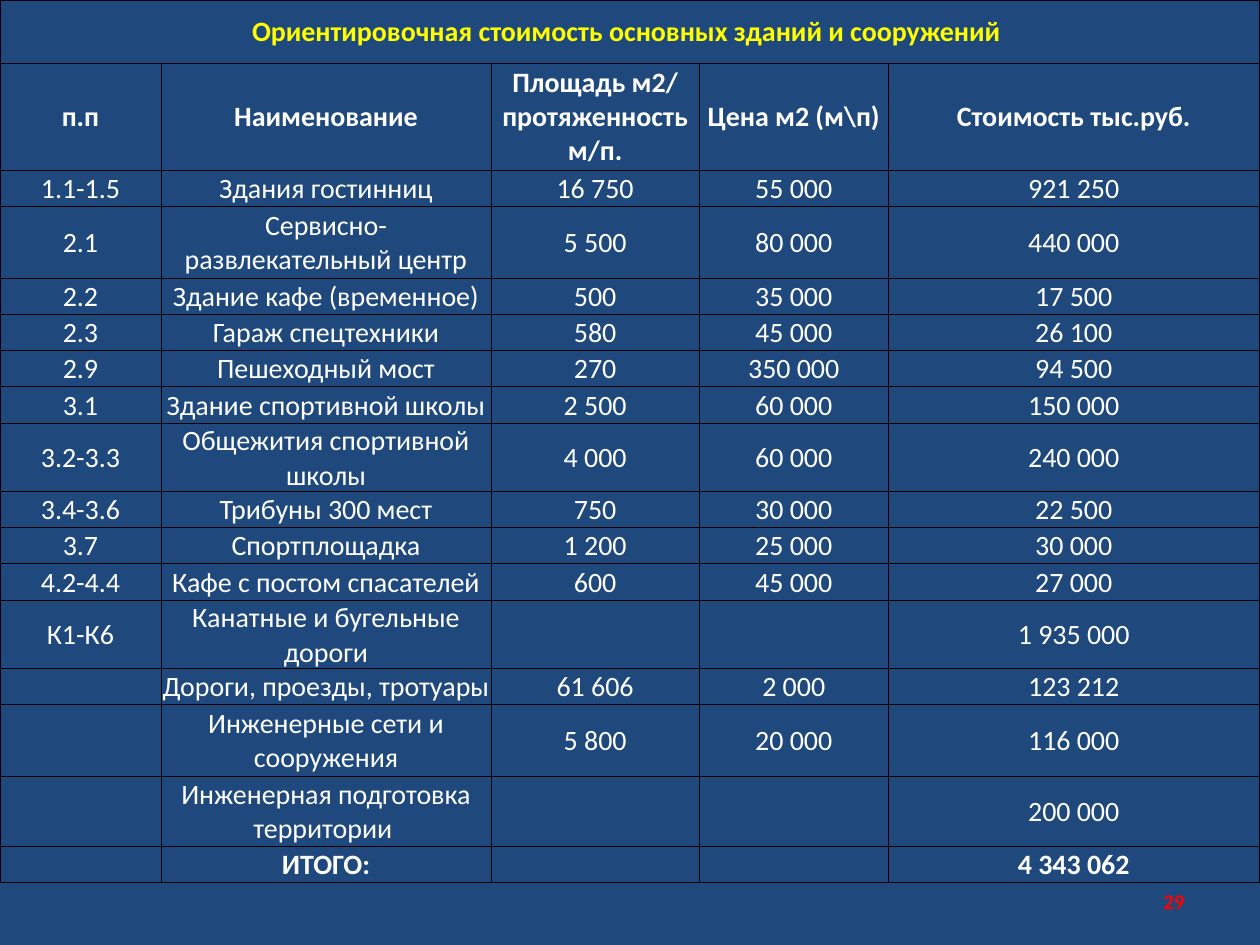
from lxml.etree import SubElement
from pptx import Presentation
from pptx.dml.color import RGBColor
from pptx.enum.text import MSO_ANCHOR as Anchor, PP_ALIGN as Align
from pptx.oxml.ns import qn
from pptx.util import Pt

NAVY, WHITE, YELLOW, RED, BLACK = "1F497D", "FFFFFF", "FFFF00", "FF0000", "000000"
TEXT_SIZE = 16
TITLE = "Ориентировочная стоимость основных зданий и сооружений "
COLUMN_WIDTHS = [92, 188.6, 119, 108, 212]
TITLE_HEIGHT, HEADER_HEIGHT, LINE_HEIGHT = 36, 61.2, 20.7
HEADER = ["п.п", "Наименование", "Площадь м2/ протяженность м/п.",
          "Цена м2 (м\\п)", "Стоимость тыс.руб."]
# Each entry: row height, then the five cells
COSTS = [
    (LINE_HEIGHT, "1.1-1.5", "Здания гостинниц", "16 750", "55 000", "921 250"),
    (41, "2.1", "Сервисно-развлекательный центр", "5 500", "80 000", "440 000"),
    (LINE_HEIGHT, "2.2", "Здание кафе (временное)", "500", "35 000", "17 500"),
    (LINE_HEIGHT, "2.3", "Гараж спецтехники", "580", "45 000", "26 100"),
    (LINE_HEIGHT, "2.9", "Пешеходный мост", "270", "350 000", "94 500"),
    (LINE_HEIGHT, "3.1", "Здание спортивной школы", "2 500", "60 000", "150 000"),
    (39, "3.2-3.3", "Общежития спортивной школы", "4 000", "60 000", "240 000"),
    (LINE_HEIGHT, "3.4-3.6", "Трибуны 300 мест", "750", "30 000", "22 500"),
    (LINE_HEIGHT, "3.7", "Спортплощадка", "1 200", "25 000", "30 000"),
    (LINE_HEIGHT, "4.2-4.4", "Кафе с постом спасателей", "600", "45 000", "27 000"),
    (39, "К1-К6", "Канатные и бугельные дороги", "", "", "1 935 000"),
    (LINE_HEIGHT, "", "Дороги, проезды, тротуары", "61 606", "2 000", "123 212"),
    (41, "", "Инженерные сети и сооружения", "5 800", "20 000", "116 000"),
    (40, "", "Инженерная подготовка территории ", "", "", "200 000"),
]
TOTAL = ["", "ИТОГО:", "", "", "4 343 062"]


def color(hex_code):
    return RGBColor.from_string(hex_code)


def write(frame, text, size=TEXT_SIZE, fill=WHITE, bold=False, align=Align.CENTER):
    para = frame.paragraphs[0]
    para.alignment = align
    if not text:
        # An empty cell takes its line height from the paragraph end mark
        SubElement(para._p, qn("a:endParaRPr"), sz=str(size * 100))
        return
    span = para.add_run()
    span.text = text
    span.font.name = "Calibri"
    span.font.size = Pt(size)
    span.font.bold = bold
    span.font.color.rgb = color(fill)


def add_borders(cell, width=0.5):
    properties = cell._tc.get_or_add_tcPr()
    for side in ("a:lnL", "a:lnR", "a:lnT", "a:lnB"):
        line = SubElement(properties, qn(side), w=str(Pt(width)))
        SubElement(SubElement(line, qn("a:solidFill")), qn("a:srgbClr"), val=BLACK)


def format_cell(cell):
    cell.margin_left = cell.margin_right = cell.margin_top = Pt(0.72)
    cell.margin_bottom = 0
    cell.vertical_anchor = Anchor.MIDDLE
    add_borders(cell)
    cell.fill.background()


def add_cost_table(page):
    heights = [TITLE_HEIGHT, HEADER_HEIGHT, *(row[0] for row in COSTS), LINE_HEIGHT]
    rows = [HEADER, *(row[1:] for row in COSTS), TOTAL]
    table = page.shapes.add_table(len(heights), len(COLUMN_WIDTHS), 0, 0,
                                  Pt(sum(COLUMN_WIDTHS)), Pt(sum(heights))).table
    table.first_row = table.horz_banding = False
    for column, width in zip(table.columns, COLUMN_WIDTHS):
        column.width = Pt(width)
    for row, height in zip(table.rows, heights):
        row.height = Pt(height)
    for cell in table.iter_cells():
        format_cell(cell)

    title = table.cell(0, 0)
    title.merge(table.cell(0, len(COLUMN_WIDTHS) - 1))
    write(title.text_frame, TITLE, fill=YELLOW, bold=True)
    for row_index, values in enumerate(rows, start=1):
        for column_index, value in enumerate(values):
            write(table.cell(row_index, column_index).text_frame, value,
                  bold=values in (HEADER, TOTAL))


def add_page_number(page, number):
    box = page.shapes.add_textbox(Pt(516), Pt(500.5), Pt(168), Pt(28.75))
    frame = box.text_frame
    frame.word_wrap = True
    frame.vertical_anchor = Anchor.MIDDLE
    write(frame, number, size=12, fill=RED, bold=True, align=Align.RIGHT)


def main():
    deck = Presentation()
    deck.slide_width, deck.slide_height = Pt(720), Pt(540)
    page = deck.slides.add_slide(deck.slide_layouts[6])
    page.background.fill.solid()
    page.background.fill.fore_color.rgb = color(NAVY)
    add_page_number(page, "29")
    add_cost_table(page)
    deck.save("out.pptx")


if __name__ == "__main__":
    main()
